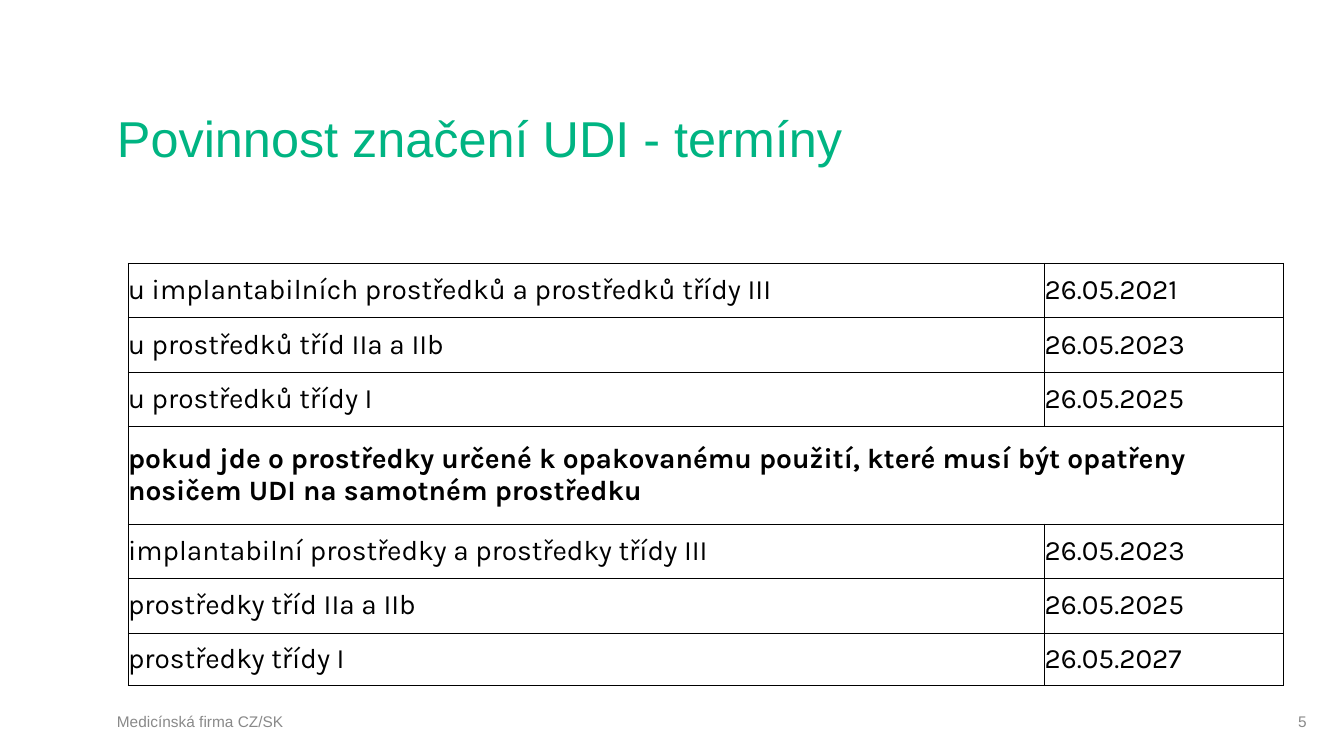
import pptx
import pptx.dml.color
import pptx.enum.text
import pptx.oxml
import pptx.oxml.ns
import pptx.util
from pptx.enum.text import MSO_ANCHOR, PP_ALIGN

GREEN = pptx.dml.color.RGBColor(0x00, 0xB4, 0x82)
GREY = pptx.dml.color.RGBColor(0x89, 0x89, 0x89)
BLACK = pptx.dml.color.RGBColor(0x00, 0x00, 0x00)

prs = pptx.Presentation()
prs.slide_width = pptx.util.Inches(13.33)
prs.slide_height = pptx.util.Inches(7.5)
# The slide is a grid of 100 columns by 100 rows
COL = prs.slide_width / 100
ROW = prs.slide_height / 100


def write(tf, text, size, color, font="Arial", bold=False,
          align=PP_ALIGN.LEFT, anchor=MSO_ANCHOR.MIDDLE, inset=0):
    tf.word_wrap = True
    tf.auto_size = pptx.enum.text.MSO_AUTO_SIZE.NONE
    tf.vertical_anchor = anchor
    tf.margin_left = tf.margin_right = pptx.util.Inches(inset)
    tf.margin_top = tf.margin_bottom = 0
    p = tf.paragraphs[0]
    p.alignment = align
    r = p.add_run()
    r.text = text
    r.font.name = font
    r.font.size = pptx.util.Pt(size)
    r.font.bold = bold
    r.font.color.rgb = color


def add_borders(cell, **widths):
    """Draw black cell borders; widths in points, keyed L, R, T and B."""
    tcPr = cell._tc.get_or_add_tcPr()
    for side, width in widths.items():
        tcPr.append(pptx.oxml.parse_xml(
            f'<a:ln{side} {pptx.oxml.ns.nsdecls("a")} w="{pptx.util.Pt(width)}">'
            f'<a:solidFill><a:srgbClr val="{BLACK}"/></a:solidFill></a:ln{side}>'))


s = prs.slides.add_slide(prs.slide_layouts[5])

title = s.shapes.title
title.left, title.top = int(8.7 * COL), int(9.6 * ROW)
title.width, title.height = int(88.6 * COL), int(12.53 * ROW)
write(title.text_frame, "Povinnost značení UDI - termíny", 36, GREEN,
      anchor=MSO_ANCHOR.BOTTOM)

for left, width, text, align in [
    (7.8, 30.68, "Medicínská firma CZ/SK", PP_ALIGN.LEFT),
    (74.79, 23.33, "5", PP_ALIGN.RIGHT),
]:
    sp = s.shapes.add_textbox(int(left * COL), int(93.07 * ROW),
                              int(width * COL), int(4.67 * ROW))
    write(sp.text_frame, text, 11, GREY, align=align, inset=0.12)

deadlines = [
    ("u implantabilních prostředků a prostředků třídy III", "26.05.2021"),
    ("u prostředků tříd IIa a IIb", "26.05.2023"),
    ("u prostředků třídy I", "26.05.2025"),
    ("pokud jde o prostředky určené k opakovanému použití, které musí být "
     "opatřeny nosičem UDI na samotném prostředku", None),
    ("implantabilní prostředky a prostředky třídy III", "26.05.2023"),
    ("prostředky tříd IIa a IIb", "26.05.2025"),
    ("prostředky třídy I", "26.05.2027"),
]
col_widths = [68.19, 17.78]
row_heights = [7.2, 7.2, 7.2, 12.93, 7.2, 7.2, 6.93]
heading_row = 3

table = s.shapes.add_table(
    len(deadlines), len(col_widths), int(9.53 * COL), int(34.8 * ROW),
    int(sum(col_widths) * COL), int(sum(row_heights) * ROW)).table
table.first_row = table.horz_banding = False
for column, width in zip(table.columns, col_widths):
    column.width = int(width * COL)
for row, height in zip(table.rows, row_heights):
    row.height = int(height * ROW)
table.cell(heading_row, 0).merge(table.cell(heading_row, 1))

for i, texts in enumerate(deadlines):
    for j, text in enumerate(texts):
        cell = table.cell(i, j)
        add_borders(cell, L=0.5, R=0.5, T=1 if i == heading_row else 0.5,
                    B=1 if i == heading_row - 1 else 0.5)
        cell.fill.background()
        cell.vertical_anchor = MSO_ANCHOR.MIDDLE
        cell.margin_left = cell.margin_right = 0
        cell.margin_top = cell.margin_bottom = 0
        if text:
            write(cell.text_frame, text, 20, BLACK, font="Karla",
                  bold=i == heading_row)

prs.save("out.pptx")
